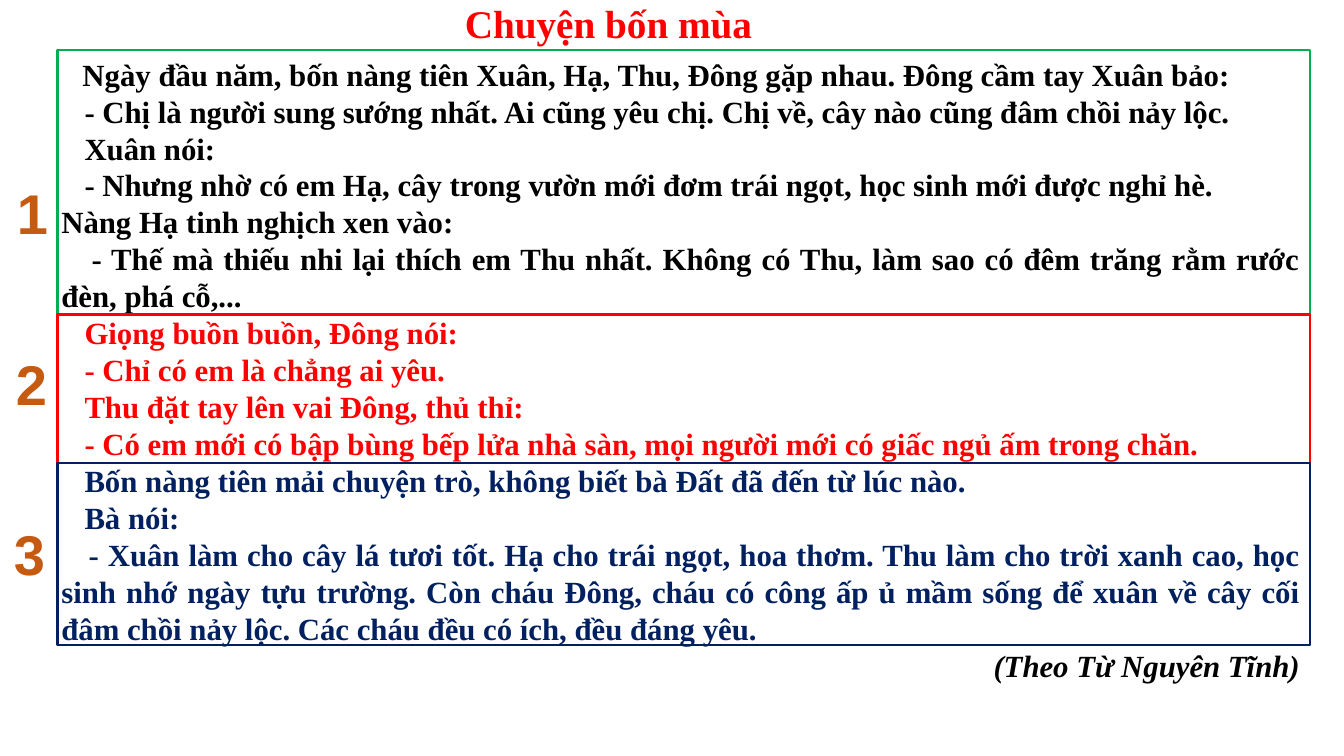
from pptx import Presentation
from pptx.enum.shapes import MSO_SHAPE
from pptx.enum.text import MSO_ANCHOR, MSO_AUTO_SIZE, PP_ALIGN
from pptx.dml.color import RGBColor
from pptx.util import Inches, Pt

COLORS = {"black": "000000", "red": "FF0000", "green": "00B050", "navy": "002060", "orange": "C55A11"}
WIDTH, HEIGHT = 13.33, 7.5

STORY = [
    ("black", [
        (0.21, "Ngày đầu năm, bốn nàng tiên Xuân, Hạ, Thu, Đông gặp nhau. Đông cầm tay Xuân bảo:"),
        (0.23, "- Chị là người sung sướng nhất. Ai cũng yêu chị. Chị về, cây nào cũng đâm chồi nảy lộc."),
        (0.23, "Xuân nói:"),
        (0.23, "- Nhưng nhờ có em Hạ, cây trong vườn mới đơm trái ngọt, học sinh mới được nghỉ hè."),
        (0, "Nàng Hạ tinh nghịch xen vào:"),
        (0.3, "- Thế mà thiếu nhi lại thích em Thu nhất. Không có Thu, làm sao có đêm trăng rằm rước "
              "đèn, phá cỗ,..."),
    ]),
    ("red", [
        (0.23, "Giọng buồn buồn, Đông nói:"),
        (0.23, "- Chỉ có em là chẳng ai yêu."),
        (0.23, "Thu đặt tay lên vai Đông, thủ thỉ:"),
        (0.23, "- Có em mới có bập bùng bếp lửa nhà sàn, mọi người mới có giấc ngủ ấm trong chăn."),
    ]),
    ("navy", [
        (0.23, "Bốn nàng tiên mải chuyện trò, không biết bà Đất đã đến từ lúc nào."),
        (0.23, "Bà nói:"),
        (0.27, "- Xuân làm cho cây lá tươi tốt. Hạ cho trái ngọt, hoa thơm. Thu làm cho trời xanh cao, học "
               "sinh nhớ ngày tựu trường. Còn cháu Đông, cháu có công ấp ủ mầm sống để xuân về cây cối "
               "đâm chồi nảy lộc. Các cháu đều có ích, đều đáng yêu."),
    ]),
]
SECTIONS = [("green", 2.62), ("red", 1.47), ("navy", 1.81)]
NUMBERS = [(0.07, 1.72), (0.06, 3.42), (0.04, 5.11)]


class StorySlide:
    """Hold the text styles and the slide, and add each kind of element to it."""

    styles = {
        "title": {"name": "Times New Roman", "size": Pt(28), "bold": True},
        "story": {"name": "Times New Roman", "size": Pt(22), "bold": True},
        "author": {"name": "Times New Roman", "size": Pt(22), "bold": True, "italic": True},
        "number": {"name": "Arial", "size": Pt(40), "bold": True},
    }
    frame_format = {"word_wrap": True, "auto_size": MSO_AUTO_SIZE.NONE, "vertical_anchor": MSO_ANCHOR.TOP,
                    "margin_left": Inches(0.1), "margin_right": Inches(0.1),
                    "margin_top": Inches(0.05), "margin_bottom": Inches(0.05)}

    def __init__(self, presentation):
        self.presentation = presentation
        self.slide = presentation.slides.add_slide(presentation.slide_layouts[5])

    def place(self, left, top, width, height):
        across, down = self.presentation.slide_width, self.presentation.slide_height
        return [round(share * side) for share, side in
                zip((left / WIDTH, top / HEIGHT, width / WIDTH, height / HEIGHT), (across, down, across, down))]

    def apply(self, target, values):
        for name, value in values.items():
            setattr(target, name, value)

    def add_text(self, paragraph, text, style, color, align=PP_ALIGN.LEFT, indent=0):
        run = paragraph.add_run()
        run.text = text
        self.apply(run.font, self.styles[style])
        run.font.color.rgb = RGBColor.from_string(COLORS[color])
        self.apply(paragraph, {"alignment": align, "line_spacing": 1.0, "space_before": Pt(0)})
        if indent:
            paragraph._p.get_or_add_pPr().set("indent", str(Inches(indent)))

    def title(self, text, color, *box):
        shape = self.slide.shapes.title
        self.apply(shape, dict(zip(("left", "top", "width", "height"), self.place(*box))))
        self.apply(shape.text_frame, self.frame_format)
        self.add_text(shape.text_frame.paragraphs[0], text, "title", color)

    def text_box(self, *box):
        frame = self.slide.shapes.add_textbox(*self.place(*box)).text_frame
        self.apply(frame, self.frame_format)
        return frame

    def story(self, parts, author, *box):
        frame = self.text_box(*box)
        paragraph = frame.paragraphs[0]
        for color, lines in parts:
            for indent, text in lines:
                self.add_text(paragraph, text, "story", color, PP_ALIGN.JUSTIFY, indent)
                paragraph = frame.add_paragraph()
        self.add_text(paragraph, author, "author", "black", PP_ALIGN.RIGHT)

    def outline(self, color, *box):
        shape = self.slide.shapes.add_shape(MSO_SHAPE.RECTANGLE, *self.place(*box))
        shape.shadow.inherit = False
        shape.fill.background()
        shape.line.color.rgb = RGBColor.from_string(COLORS[color])
        shape.line.width = Pt(1.5)

    def number(self, text, *box):
        self.add_text(self.text_box(*box).paragraphs[0], text, "number", "orange")


def main():
    presentation = Presentation()
    presentation.slide_width, presentation.slide_height = Inches(WIDTH), Inches(HEIGHT)
    page = StorySlide(presentation)
    page.title("Chuyện bốn mùa", "red", 4.51, -0.06, 3.75, 0.57)
    page.story(STORY, "(Theo Từ Nguyên Tĩnh)", 0.51, 0.5, 12.48, 6.4)
    top = 0.5
    for color, height in SECTIONS:
        page.outline(color, 0.57, top, 12.42, height)
        top += height
    for index, (left, number_top) in enumerate(NUMBERS, 1):
        page.number(str(index), left, number_top, 0.26, 0.77)
    presentation.save("out.pptx")


if __name__ == "__main__":
    main()
